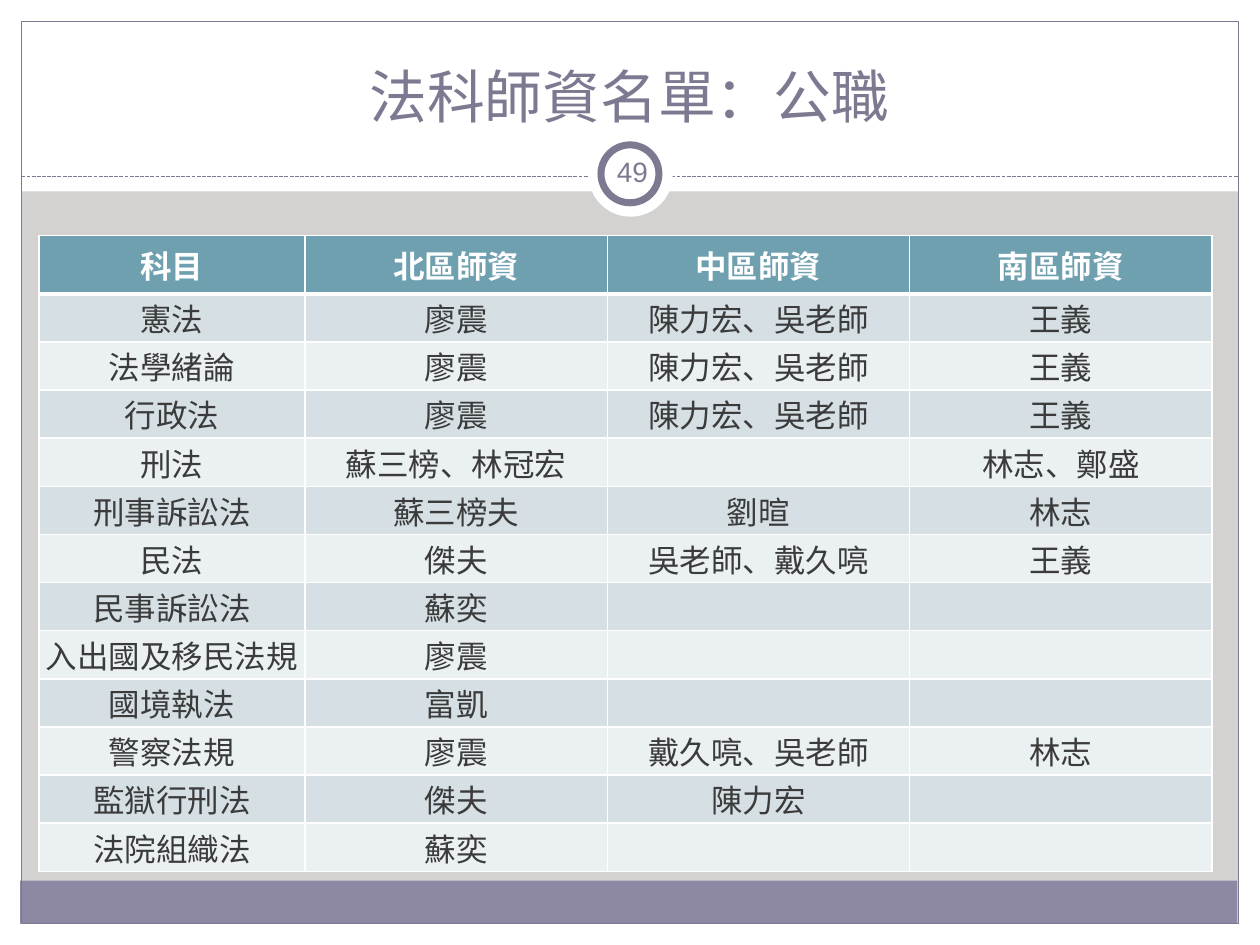
import lxml.etree
import pptx
import pptx.dml.color
import pptx.enum.dml
import pptx.enum.shapes
import pptx.enum.text
import pptx.oxml.ns
import pptx.util

Inches = pptx.util.Inches
Pt = pptx.util.Pt
SHAPES = pptx.enum.shapes.MSO_SHAPE
ANCHOR = pptx.enum.text.MSO_ANCHOR
qn = pptx.oxml.ns.qn

WHITE, PURPLE, TEAL, DARK = "FFFFFF", "7C7991", "6EA0B0", "3B3B3B"
BANDS = ("D5DFE4", "EBF0F2")
TITLE = "法科師資名單：公職"
PAGE_NUMBER = "49"
HEADINGS = ("科目", "北區師資", "中區師資", "南區師資")
TEACHERS = [
    ("憲法", "廖震", "陳力宏、吳老師", "王義"),
    ("法學緒論", "廖震", "陳力宏、吳老師", "王義"),
    ("行政法", "廖震", "陳力宏、吳老師", "王義"),
    ("刑法", "蘇三榜、林冠宏", "", "林志、鄭盛"),
    ("刑事訴訟法", "蘇三榜夫", "劉暄", "林志"),
    ("民法", "傑夫", "吳老師、戴久喨", "王義"),
    ("民事訴訟法", "蘇奕", "", ""),
    ("入出國及移民法規", "廖震", "", ""),
    ("國境執法", "富凱", "", ""),
    ("警察法規", "廖震", "戴久喨、吳老師", "林志"),
    ("監獄行刑法", "傑夫", "陳力宏", ""),
    ("法院組織法", "蘇奕", "", ""),
]
COLUMN_WIDTHS = (2.11, 2.4, 2.4, 2.4)
ROW_HEIGHT = 0.35
BARS = [
    (0, 7.33, 10, 0.17, WHITE),
    (0, 0, 10, 1.52, WHITE),
    (0, 0, 0.17, 7.5, WHITE),
    (9.83, 0, 0.17, 7.5, WHITE),
    (0.16, 6.99, 9.66, 0.34, "8D89A4"),
]


def rgb(value):
    return pptx.dml.color.RGBColor.from_string(value)


def paint(fill, color):
    fill.solid()
    fill.fore_color.rgb = rgb(color)


def add_shape(page, kind, place, fill=None, line=None, width=0.75):
    shape = page.shapes.add_shape(kind, *map(Inches, place))
    shape.shadow.inherit = False
    if fill:
        paint(shape.fill, fill)
    else:
        shape.fill.background()
    if line:
        shape.line.color.rgb = rgb(line)
        shape.line.width = Pt(width)
    else:
        shape.line.fill.background()


def write(frame, text, size, color, bold=False):
    frame.text = text
    para = frame.paragraphs[0]
    para.alignment = pptx.enum.text.PP_ALIGN.CENTER
    para.font.name = "Arial"
    para.font.size = Pt(size)
    para.font.bold = bold
    para.font.color.rgb = rgb(color)


def set_margins(target, side, top):
    target.margin_left = target.margin_right = Inches(side)
    target.margin_top = target.margin_bottom = Inches(top)


def add_borders(cell, bottom_width):
    properties = cell._tc.get_or_add_tcPr()
    for side, width in (("L", 1), ("R", 1), ("T", 1), ("B", bottom_width)):
        border = lxml.etree.SubElement(properties, qn(f"a:ln{side}"), w=str(Pt(width)))
        solid = lxml.etree.SubElement(border, qn("a:solidFill"))
        lxml.etree.SubElement(solid, qn("a:srgbClr"), val=WHITE)


def add_frame(page):
    for *place, color in BARS:
        add_shape(page, SHAPES.RECTANGLE, place, color)
    add_shape(page, SHAPES.RECTANGLE, (0.17, 0.17, 9.66, 7.16), line=PURPLE)
    divider = page.shapes.add_connector(
        pptx.enum.shapes.MSO_CONNECTOR.STRAIGHT,
        Inches(0.17), Inches(1.4), Inches(9.83), Inches(1.4))
    divider.line.color.rgb = rgb(PURPLE)
    divider.line.width = Pt(0.75)
    divider.line.dash_style = pptx.enum.dml.MSO_LINE.SQUARE_DOT
    lxml.etree.SubElement(divider.element.spPr, qn("a:effectLst"))
    add_shape(page, SHAPES.OVAL, (4.67, 1.05, 0.67, 0.67), WHITE)
    add_shape(page, SHAPES.OVAL, (4.77, 1.15, 0.46, 0.46), WHITE, PURPLE, 4)


def add_title(page):
    title = page.shapes.title
    title.left, title.top, title.width, title.height = map(Inches, (0.33, 0.25, 9.33, 0.83))
    title.text_frame.vertical_anchor = ANCHOR.BOTTOM
    write(title.text_frame, TITLE, 33, PURPLE)
    title.element.getparent().append(title.element)


def add_teacher_table(page):
    rows = [HEADINGS] + TEACHERS
    table = page.shapes.add_table(
        len(rows), len(HEADINGS), Inches(0.31), Inches(1.87),
        Inches(sum(COLUMN_WIDTHS)), Inches(ROW_HEIGHT * len(rows))).table
    for column, width in zip(table.columns, COLUMN_WIDTHS):
        column.width = Inches(width)
    for r, texts in enumerate(rows):
        table.rows[r].height = Inches(ROW_HEIGHT)
        header = r == 0
        for c, text in enumerate(texts):
            cell = table.cell(r, c)
            add_borders(cell, 3 if header else 1)
            paint(cell.fill, TEAL if header else BANDS[(r - 1) % 2])
            cell.vertical_anchor = ANCHOR.MIDDLE
            if not header:
                set_margins(cell, 0.02, 0.01)
            write(cell.text_frame, text, 18, WHITE if header else DARK, header)


def add_page_number(page):
    box = page.shapes.add_textbox(*map(Inches, (4.77, 1.12, 0.5, 0.48)))
    frame = box.text_frame
    frame.word_wrap = True
    frame.vertical_anchor = ANCHOR.MIDDLE
    set_margins(frame, 0.05, 0.05)
    write(frame, PAGE_NUMBER, 16, PURPLE)


def main():
    deck = pptx.Presentation()
    deck.slide_width, deck.slide_height = Inches(10), Inches(7.5)
    page = deck.slides.add_slide(deck.slide_layouts[5])
    paint(page.background.fill, "D4D2D0")
    add_frame(page)
    add_title(page)
    add_teacher_table(page)
    add_page_number(page)
    deck.save("out.pptx")


if __name__ == "__main__":
    main()
